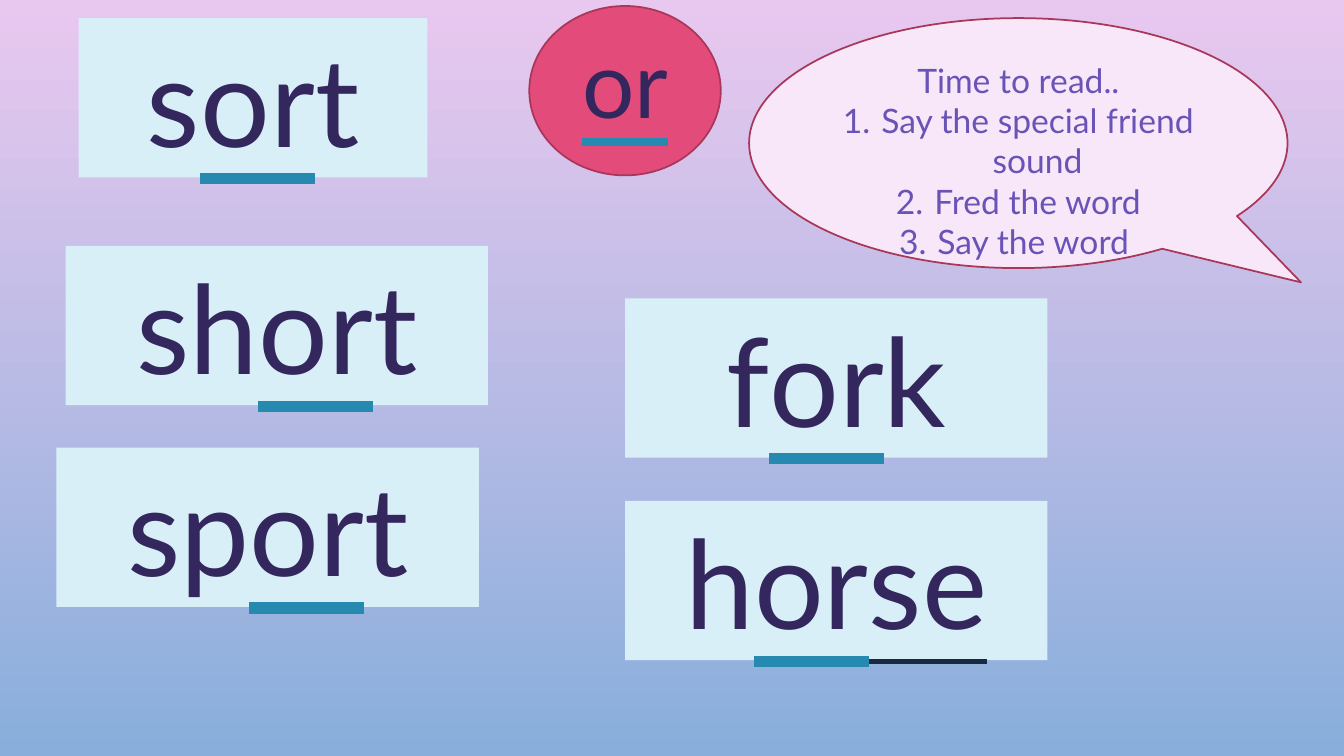
"""Build a phonics slide practising words with the "or" sound."""
from typing import NamedTuple, Optional

from lxml import etree
from pptx import Presentation
from pptx import util as u
from pptx.dml.color import RGBColor
from pptx.enum import shapes, text
from pptx.oxml.ns import qn

SKY_TOP = RGBColor(0xE9, 0xC8, 0xEF)
SKY_BOTTOM = RGBColor(0x89, 0xAE, 0xDB)
CARD = RGBColor(0xD9, 0xEF, 0xF7)
PINK = RGBColor(0xE3, 0x4B, 0x7A)
BUBBLE = RGBColor(0xF8, 0xE7, 0xF9)
OUTLINE = RGBColor(0xA8, 0x37, 0x5A)
INK = RGBColor(0x33, 0x27, 0x5E)
VIOLET = RGBColor(0x69, 0x53, 0xB7)
TEAL = RGBColor(0x26, 0x8A, 0xB0)
NAVY = RGBColor(0x17, 0x2A, 0x42)

FONT = "Lato"
WIDTH, HEIGHT = u.Inches(13.33), u.Inches(7.5)
SOUND = "or"
CARD_HEIGHT = 21.07
WIDE = 31.43


class Area(NamedTuple):
    """Percentages of the slide's width and height."""
    left: float
    top: float
    width: float
    height: float

    def emu(self) -> list[int]:
        sides = (WIDTH, HEIGHT, WIDTH, HEIGHT)
        return [round(share * side / 100) for share, side in zip(self, sides)]


class WordCard(NamedTuple):
    start: str
    end: str
    left: float
    top: float
    width: float = WIDE
    end_underline: Optional[RGBColor] = None


CARDS = [
    WordCard("s", "t", 5.85, 2.4, width=25.96),
    WordCard("sh", "t", 4.88, 32.53),
    WordCard("sp", "t", 4.2, 59.2),
    WordCard("f", "k", 46.51, 39.47),
    WordCard("h", "se", 46.51, 66.27, end_underline=NAVY),
]
STEPS = ["Say the special friend sound", "Fred the word", "Say the word "]


def add_run(paragraph, words: str, size: float, colour: RGBColor,
            underline: Optional[RGBColor] = None, heavy: bool = True) -> None:
    run = paragraph.add_run()
    run.text = words
    font = run.font
    font.size = u.Pt(size)
    font.color.rgb = colour
    if underline is not None:
        font.underline = (text.MSO_UNDERLINE.HEAVY_LINE if heavy
                          else text.MSO_UNDERLINE.SINGLE_LINE)
        rule = etree.SubElement(run._r.get_or_add_rPr(), qn("a:uFill"))
        solid = etree.SubElement(rule, qn("a:solidFill"))
        etree.SubElement(solid, qn("a:srgbClr"), val=str(underline))
    font.name = FONT


def add_panel(parent, kind: shapes.MSO_SHAPE, area: Area, fill: RGBColor,
              outline: Optional[RGBColor] = None):
    panel = parent.add_shape(kind, *area.emu())
    panel.shadow.inherit = False
    panel.fill.solid()
    panel.fill.fore_color.rgb = fill
    if outline is None:
        panel.line.fill.background()
    else:
        panel.line.color.rgb = outline
        panel.line.width = u.Pt(1.25)
    panel.text_frame.word_wrap = True
    return panel


def add_card(slide, card: WordCard) -> None:
    area = Area(card.left, card.top, card.width, CARD_HEIGHT)
    panel = add_panel(slide.shapes, shapes.MSO_SHAPE.RECTANGLE, area, CARD)
    word = panel.text_frame.paragraphs[0]
    word.alignment = text.PP_ALIGN.CENTER
    add_run(word, card.start, 88, INK)
    add_run(word, SOUND, 88, INK, TEAL)
    add_run(word, card.end, 88, INK, card.end_underline, heavy=False)


def add_sound_badge(slide) -> None:
    badge = slide.shapes.add_group_shape()
    add_panel(badge.shapes, shapes.MSO_SHAPE.OVAL,
              Area(39.38, 0.8, 14.25, 22.4), PINK, OUTLINE)
    label = badge.shapes.add_textbox(*Area(39.38, 2.8, 14.25, 16.13).emu())
    label.text_frame.word_wrap = True
    sound = label.text_frame.paragraphs[0]
    sound.alignment = text.PP_ALIGN.CENTER
    add_run(sound, SOUND, 66, INK, TEAL)


def add_instructions(slide) -> None:
    bubble = add_panel(slide.shapes, shapes.MSO_SHAPE.OVAL_CALLOUT,
                       Area(55.74, 2.4, 40.06, 33.07), BUBBLE, OUTLINE)
    bubble.adjustments[0], bubble.adjustments[1] = 0.525, 0.557
    frame = bubble.text_frame
    frame.vertical_anchor = text.MSO_ANCHOR.TOP
    heading = frame.paragraphs[0]
    heading.alignment = text.PP_ALIGN.CENTER
    add_run(heading, "Time to read..", 24, VIOLET)
    indent = u.Inches(0.38)
    for step in STEPS:
        line = frame.add_paragraph()
        line.alignment = text.PP_ALIGN.CENTER
        properties = line._p.get_or_add_pPr()
        properties.set("marL", str(indent))
        properties.set("indent", str(-indent))
        etree.SubElement(properties, qn("a:buFont"), typeface="+mj-lt")
        etree.SubElement(properties, qn("a:buAutoNum"), type="arabicPeriod")
        add_run(line, step, 24, VIOLET)


def paint_sky(slide) -> None:
    sky = slide.background.fill
    sky.gradient()
    sky.gradient_angle = 270
    for stop, colour in zip(sky.gradient_stops, (SKY_TOP, SKY_BOTTOM)):
        stop.color.rgb = colour


def main() -> None:
    deck = Presentation()
    deck.slide_width, deck.slide_height = WIDTH, HEIGHT
    slide = deck.slides.add_slide(deck.slide_layouts[6])
    paint_sky(slide)
    add_sound_badge(slide)
    add_instructions(slide)
    for card in CARDS:
        add_card(slide, card)
    deck.save("out.pptx")


if __name__ == "__main__":
    main()
